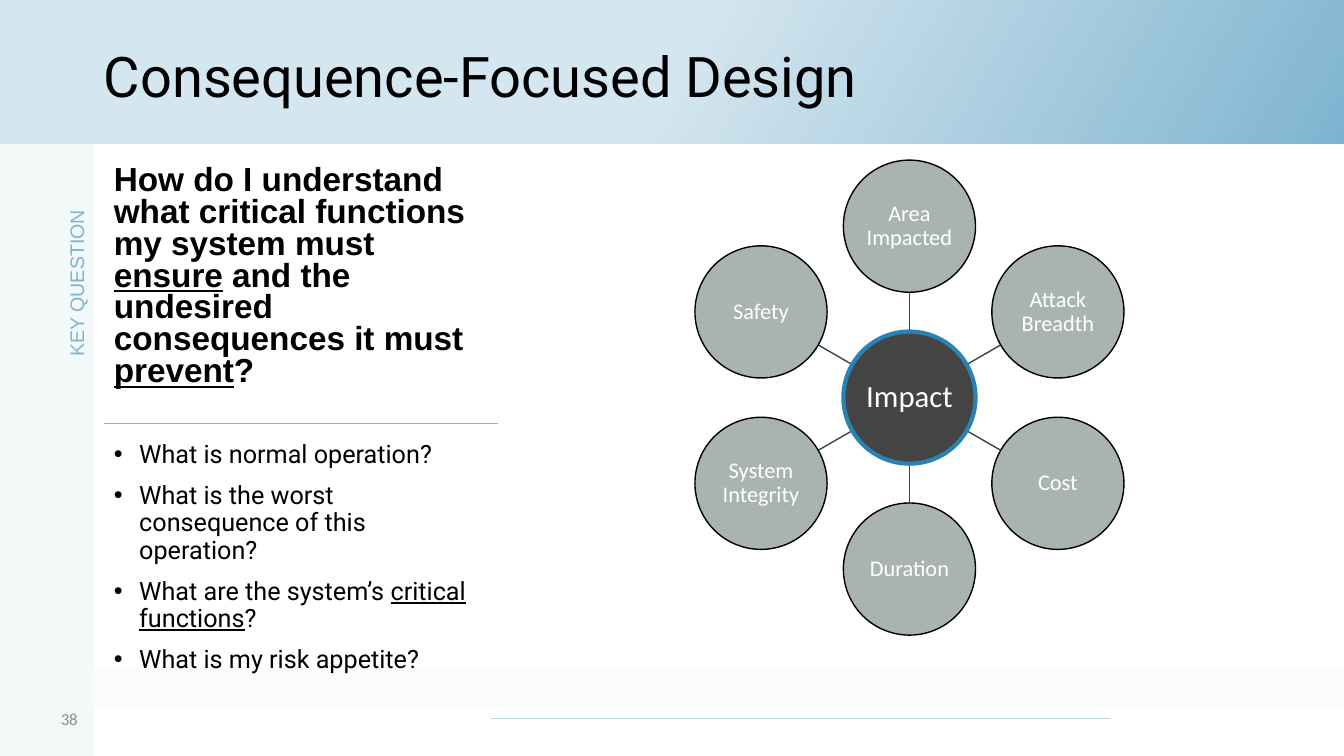
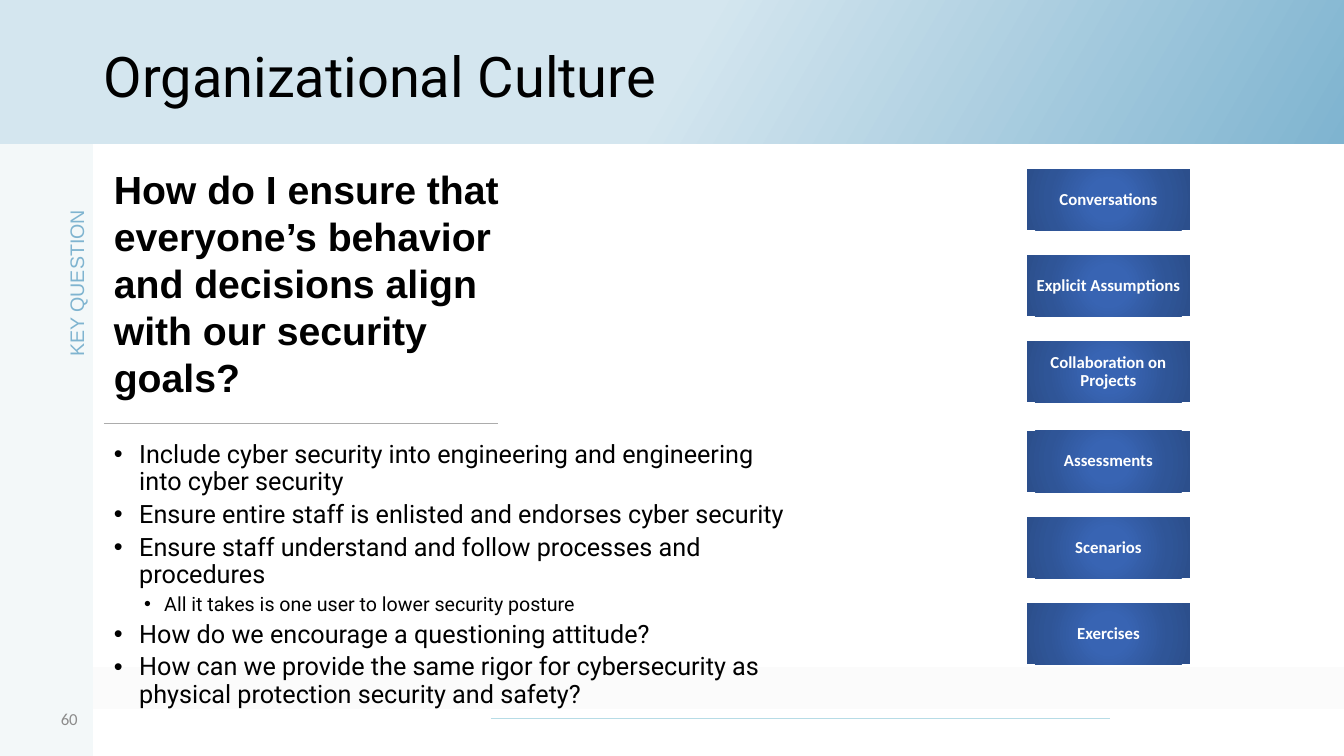
from math import cos, radians, sin

from lxml.etree import SubElement
from pptx import Presentation
from pptx.dml.color import RGBColor as Rgb
from pptx.enum.shapes import MSO_CONNECTOR as Link, MSO_SHAPE as Kind
from pptx.enum.text import MSO_ANCHOR as Anchor, PP_ALIGN as Align
from pptx.oxml import parse_xml
from pptx.oxml.ns import nsdecls, qn
from pptx.util import Cm, Pt

INK = {
    "black": "000000", "white": "FFFFFF", "haze": "FBFBFB",
    "pale": "D4E6EF", "sky": "7FB4D0", "side": "F3F8F9",
    "foot": "B7DCE6", "rule": "ACACAC", "page": "8C8C8C",
    "hub": "444445", "ring": "2982B1", "node": "A9B4B0", "spoke": "364355",
    "mid": "3864B3", "deep": "2F5597", "edge": "2C4F8C",
}
WIDE, HIGH = 33.87, 19.05
BAND, SIDE, LEFT = 3.63, 2.34, 2.62

SWEEP = '<a:lin ang="{}" scaled="0"/>'
GLOW = ('<a:path path="circle">'
        '<a:fillToRect l="50000" t="50000" r="50000" b="50000"/></a:path>')
FADE = ([(30, "white"), (70, "haze"), (78, "white")], SWEEP.format(90 * 60000))
BLEND = ([(50, "pale"), (100, "sky")], SWEEP.format(30 * 60000))
BUTTON = ([(0, "mid"), (23, "mid"), (69, "deep"), (97, "edge")], GLOW)


def draw(slide, kind, box, fill, line=None, width=1):
    """Add a preset shape; fill is a colour name or a (stops, way) gradient."""
    shape = slide.shapes.add_shape(kind, *map(Cm, box))
    shape.shadow.inherit = False
    if isinstance(fill, str):
        shape.fill.solid()
        shape.fill.fore_color.rgb = Rgb.from_string(INK[fill])
    else:
        stops, way = fill
        marks = "".join(f'<a:gs pos="{pos * 1000}"><a:srgbClr val="{INK[hue]}"/></a:gs>'
                        for pos, hue in stops)
        shape.element.spPr.find(qn("a:prstGeom")).addnext(parse_xml(
            f'<a:gradFill {nsdecls("a")} rotWithShape="1">'
            f'<a:gsLst>{marks}</a:gsLst>{way}</a:gradFill>'))
    if line:
        shape.line.color.rgb = Rgb.from_string(INK[line])
        shape.line.width = Pt(width)
    else:
        shape.line.fill.background()
    return shape


def write(shape, lines, size, font, hue, align=Align.LEFT, anchor=Anchor.TOP,
          bold=False, inset=(0.25, 0.13), space=1.0, gap=0):
    """Fill a shape with paragraphs; words between underscores are underlined."""
    frame = shape.text_frame
    frame.word_wrap = True
    frame.vertical_anchor = anchor
    frame.margin_left = frame.margin_right = Cm(inset[0])
    frame.margin_top = frame.margin_bottom = Cm(inset[1])
    frame.text = "\n".join(lines)
    for i, para in enumerate(frame.paragraphs):
        para.alignment = align
        para.line_spacing = space
        if i:
            para.space_before = Pt(gap)
        parts = para.text.split("_")
        para.text = parts[0]
        for part in parts[1:]:
            para.add_run().text = part
        for j, run in enumerate(para.runs):
            run.font.size, run.font.name, run.font.bold = Pt(size), font, bold
            run.font.color.rgb = Rgb.from_string(INK[hue])
            run.font.underline = j % 2 == 1
    return frame


# Wheel: a hub with six nodes, clockwise from the top
MIDX, MIDY, SIZE, ORBIT = 22.92, 10.02, 3.33, 4.32
NODES = ["Area Impacted", "Attack Breadth", "Cost", "Duration",
         "System Integrity", "Safety"]
TURNS = [radians(60 * i - 90) for i in range(len(NODES))]
NEAR, FAR = SIZE / 2, ORBIT - SIZE / 2
SPOKES = [(MIDX + NEAR * cos(t), MIDY + NEAR * sin(t),
           MIDX + FAR * cos(t), MIDY + FAR * sin(t), "spoke", 1) for t in TURNS]
DISCS = [("Impact", MIDX, MIDY, "hub", "ring", 3, 22)]
DISCS += [(name, MIDX + ORBIT * cos(t), MIDY + ORBIT * sin(t), "node", "black", 1, 16)
          for name, t in zip(NODES, TURNS)]

RULES = [(12.37, 18.11, 27.97, 18.11, "foot", 0.75),
         (LEFT, 10.67, 12.55, 10.67, "rule", 0.75)]

BUTTONS = ["Conversations", "Explicit Assumptions", "Collaboration on Projects",
           "Assessments", "Scenarios", "Exercises"]

PAGES = [
    dict(page="38", title="Consequence-Focused Design", lines=RULES + SPOKES,
         ask="How do I understand what critical functions my system must _ensure_ "
             "and the undesired consequences it must _prevent_?",
         size=23.8, space=0.8, wide=9.93,
         items=[(0, "What is normal operation?"),
                (0, "What is the worst consequence of this operation?"),
                (0, "What are the system’s _critical functions_?"),
                (0, "What is my risk appetite?")],
         span=9.93, gap=10, discs=DISCS, buttons=[]),
    dict(page="60", title="Organizational Culture", lines=RULES,
         ask="How do I ensure that everyone’s behavior and decisions align "
             "with our security goals?",
         size=28, space=1.0, wide=11.2,
         items=[(0, "Include cyber security into engineering and engineering "
                    "into cyber security"),
                (0, "Ensure entire staff is enlisted and endorses cyber security"),
                (0, "Ensure staff understand and follow processes and procedures"),
                (1, "All it takes is one user to lower security posture"),
                (0, "How do we encourage a questioning attitude?"),
                (0, "How can we provide the same rigor for cybersecurity as "
                    "physical protection security and safety?")],
         span=17.81, gap=4, discs=[], buttons=BUTTONS),
]

deck = Presentation()
deck.slide_width, deck.slide_height = Cm(WIDE), Cm(HIGH)

for page in PAGES:
    slide = deck.slides.add_slide(deck.slide_layouts[6])
    text = slide.shapes.add_textbox

    # Bands and side label
    draw(slide, Kind.RECTANGLE, (0, 14.57, WIDE, 4.47), FADE)
    draw(slide, Kind.RECTANGLE, (0, 0, WIDE, BAND), BLEND)
    draw(slide, Kind.RECTANGLE, (0, BAND, SIDE, HIGH - BAND), "side")
    label = text(Cm(-0.57), Cm(6.71), Cm(5), Cm(0.86))
    label.rotation = 270
    write(label, ["KEY QUESTION"], 14, "Arial", "sky", Align.CENTER)

    # Rules and spokes
    for x1, y1, x2, y2, hue, width in page["lines"]:
        line = slide.shapes.add_connector(Link.STRAIGHT, Cm(x1), Cm(y1), Cm(x2), Cm(y2))
        line.line.color.rgb = Rgb.from_string(INK[hue])
        line.line.width = Pt(width)
        SubElement(line.element.spPr, qn("a:effectLst"))

    # Title, question and page number
    write(text(Cm(LEFT), Cm(1.02), Cm(29.82), Cm(1.96)), [page["title"]],
          40, "Roboto", "black", anchor=Anchor.MIDDLE, inset=(0, 0.13), space=0.9)
    write(text(Cm(LEFT), Cm(4.04), Cm(page["wide"]), Cm(6.32)), [page["ask"]],
          page["size"], "Arial", "black", bold=True, space=page["space"])
    write(text(Cm(0.58), Cm(17.6), Cm(1.63), Cm(1.02)), [page["page"]],
          12, "Calibri", "page", Align.RIGHT, Anchor.MIDDLE)

    # Bullets
    items = page["items"]
    frame = write(text(Cm(LEFT), Cm(11), Cm(page["span"]), Cm(5.72)),
                  [item for _, item in items], 18, "Roboto", "black",
                  space=0.9, gap=page["gap"])
    for para, (level, _) in zip(frame.paragraphs, items):
        para.level = level
        props = para._p.get_or_add_pPr()
        props.set("marL", str(Cm((0.64, 1.27)[level])))
        props.set("indent", str(Cm((-0.64, -0.51)[level])))
        SubElement(props, qn("a:buFont"), typeface="Arial")
        SubElement(props, qn("a:buChar"), char="•")
        for run in para.runs:
            run.font.size = Pt((18, 14)[level])

    # Wheel
    for name, x, y, fill, ring, width, size in page["discs"]:
        disc = draw(slide, Kind.OVAL, (x - SIZE / 2, y - SIZE / 2, SIZE, SIZE),
                    fill, ring, width)
        write(disc, [name], size, "Calibri", "white", Align.CENTER, Anchor.MIDDLE,
              inset=(0.03, 0.03), space=0.9)

    # Buttons, in two groups of three
    for i, name in enumerate(page["buttons"]):
        top = 4.26 + 2.17 * i + 0.09 * (i // 3)
        button = draw(slide, Kind.RECTANGLE, (25.88, top, 4.11, 1.54), BUTTON)
        write(button, [name], 12, "Calibri", "white", Align.CENTER, Anchor.MIDDLE,
              bold=True, inset=(0.12, 0.12), space=0.9)

deck.save("out.pptx")
